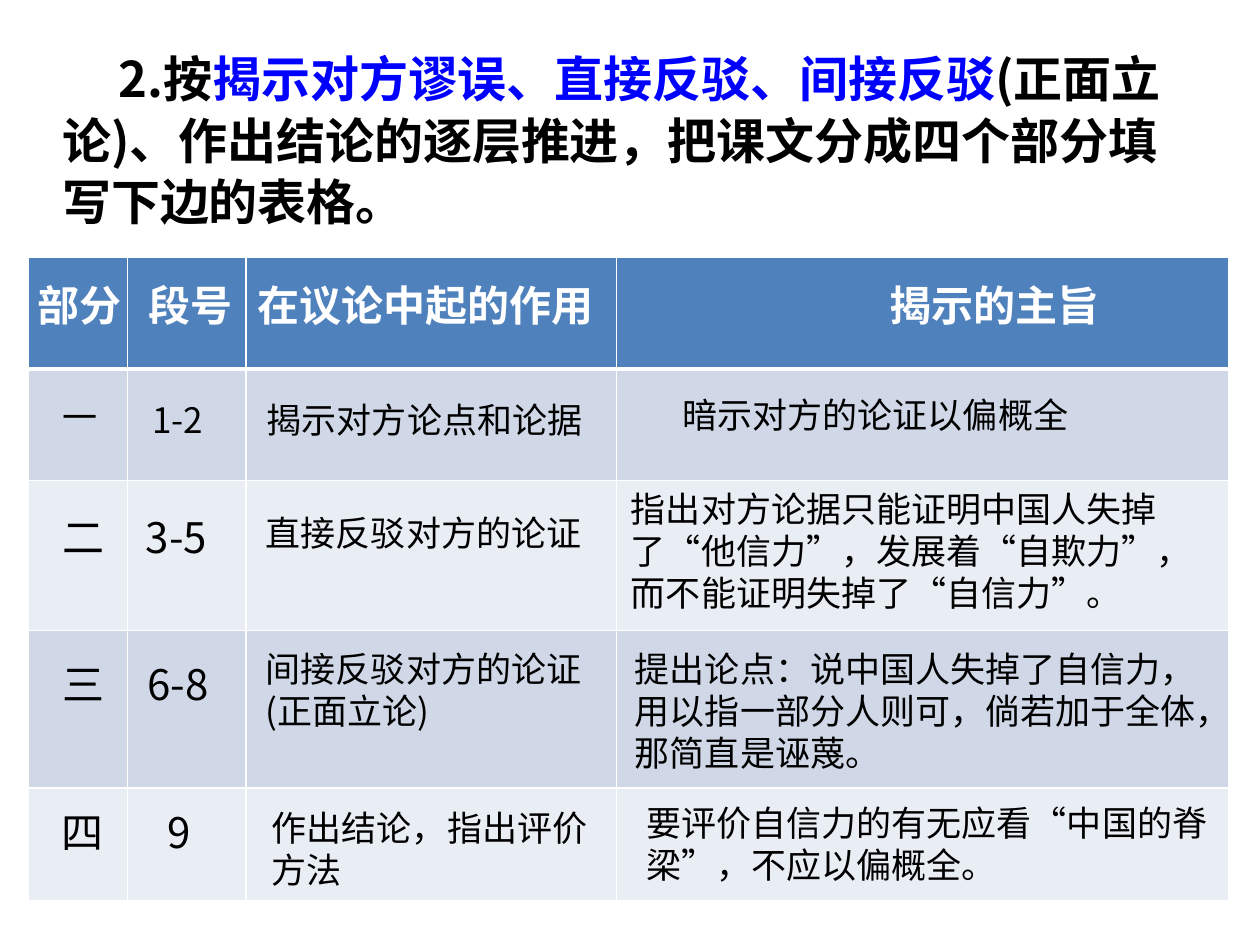
from dataclasses import dataclass
from typing import Any

from lxml import etree
from pptx import Presentation, util as u
from pptx.dml.color import RGBColor
from pptx.enum import text
from pptx.oxml import ns

COLORS = {"black": "000000", "white": "FFFFFF", "accent": "0000FF",
          "header": "4F81BD", "odd": "D0D8E8", "even": "E9EDF4"}
MIDDLE_INSET = 0.25


@dataclass
class Lesson:
    slide: Any
    font: str = "Noto Sans CJK SC"

    def style(self, run, size, color="black", bold=False):
        for name, value in {"size": u.Pt(size), "bold": bold, "name": self.font}.items():
            setattr(run.font, name, value)
        run.font.color.rgb = RGBColor.from_string(COLORS[color])
        east_asian = etree.SubElement(run.font._element, ns.qn("a:ea"))
        east_asian.set("typeface", self.font)

    def place(self, shape, left, top, width, height):
        for name, value in zip(("left", "top", "width", "height"), (left, top, width, height)):
            setattr(shape, name, u.Cm(value))

    def title(self, box, parts, size, indent):
        heading = self.slide.shapes.title
        self.place(heading, *box)
        heading.fill.solid()
        heading.fill.fore_color.rgb = RGBColor.from_string(COLORS["white"])
        white = heading._element.spPr.find(f".//{ns.qn('a:srgbClr')}")
        etree.SubElement(white, ns.qn("a:alpha")).set("val", "18000")
        frame = heading.text_frame
        for name, value in {"word_wrap": True, "auto_size": text.MSO_AUTO_SIZE.NONE,
                            "vertical_anchor": text.MSO_ANCHOR.TOP}.items():
            setattr(frame, name, value)
        paragraph = frame.paragraphs[0]
        for name, value in {"alignment": text.PP_ALIGN.LEFT, "line_spacing": u.Pt(35)}.items():
            setattr(paragraph, name, value)
        paragraph._p.get_or_add_pPr().set("indent", str(u.Cm(indent)))
        for words, color in parts:
            run = paragraph.add_run()
            run.text = words
            self.style(run, size, color, bold=True)

    def border(self, cell, side, points):
        line = etree.SubElement(cell._tc.get_or_add_tcPr(), ns.qn(f"a:ln{side}"))
        line.set("w", str(u.Pt(points)))
        fill = etree.SubElement(line, ns.qn("a:solidFill"))
        etree.SubElement(fill, ns.qn("a:srgbClr")).set("val", COLORS["white"])

    def grid(self, left, top, widths, heights):
        table = self.slide.shapes.add_table(
            len(heights), len(widths), u.Cm(left), u.Cm(top),
            u.Cm(sum(widths)), u.Cm(sum(heights))).table
        for column, width in zip(table.columns, widths):
            column.width = u.Cm(width)
        for index, (row, height) in enumerate(zip(table.rows, heights)):
            row.height = u.Cm(height)
            band = "header" if index == 0 else ("even", "odd")[index % 2]
            weights = {"L": 1, "R": 1, "T": 3 if index == 1 else 1, "B": 3 if index == 0 else 1}
            for cell in row.cells:
                for side, points in weights.items():
                    self.border(cell, side, points)
                cell.fill.solid()
                cell.fill.fore_color.rgb = RGBColor.from_string(COLORS[band])

    def label(self, words, left, top, width, size=20, lines=1, color="black", bold=False):
        height = lines * u.Pt(size * 1.2).cm + MIDDLE_INSET
        box = self.slide.shapes.add_textbox(*map(u.Cm, (left, top, width, height)))
        frame = box.text_frame
        frame.word_wrap = True
        frame.auto_size = text.MSO_AUTO_SIZE.SHAPE_TO_FIT_TEXT
        for index, line in enumerate(words.split("\n")):
            paragraph = frame.add_paragraph() if index else frame.paragraphs[0]
            run = paragraph.add_run()
            run.text = line
            self.style(run, size, color, bold)


def main():
    deck = Presentation()
    deck.slide_width, deck.slide_height = u.Cm(25.4), u.Cm(19.05)
    lesson = Lesson(deck.slides.add_slide(deck.slide_layouts[5]))

    lesson.title((1, 0.81, 23.11, 3.81), [
        ("2.按", "black"),
        ("揭示对方谬误、直接反驳、间接反驳", "accent"),
        ("(正面立论)、作出结论的逐层推进，把课文分成四个部分填写下边的表格。", "black"),
    ], size=28, indent=1.14)

    lesson.grid(0.56, 5.19, widths=(2.01, 2.39, 7.47, 12.35),
                heights=(2.25, 2.25, 3.02, 3.18, 2.26))

    headings = [("部分", 0.51, 2.24), ("段号", 2.74, 2.24),
                ("在议论中起的作用", 4.95, 7.6), ("揭示的主旨", 17.68, 5)]
    for words, left, width in headings:
        lesson.label(words, left, 5.51, width, size=24, color="white", bold=True)

    numbers = [("一", 1.02, 7.85, "1-2", 2.82, 7.9, 20),
               ("二", 1.02, 10.19, "3-5", 2.69, 10.19, 24),
               ("三", 1.02, 13.16, "6-8", 2.72, 13.16, 24),
               ("四", 0.99, 16.13, "9", 3.12, 16.13, 24)]
    for part, part_left, part_top, span, span_left, span_top, size in numbers:
        lesson.label(part, part_left, part_top, 1.79, size)
        lesson.label(span, span_left, span_top, 2.13 if "-" in span else 1.3, size)

    answers = [
        ("揭示对方论点和论据", 5.13, 7.9, 7.65, 1),
        ("暗示对方的论证以偏概全", 13.51, 7.8, 8.48, 1),
        ("直接反驳对方的论证", 5.11, 10.19, 8.81, 1),
        ("指出对方论据只能证明中国人失掉了“他信力”，发展着“自欺力”，而不能证明失掉了“自信力”。",
         12.47, 9.7, 12.01, 3),
        ("间接反驳对方的论证\n(正面立论)", 5.11, 12.93, 7.04, 2),
        ("提出论点：说中国人失掉了自信力，用以指一部分人则可，倘若加于全体，那简直是诬蔑。",
         12.55, 12.93, 12.01, 3),
        ("作出结论，指出评价方法", 5.23, 16.13, 7.01, 2),
        ("要评价自信力的有无应看“中国的脊梁”，不应以偏概全。", 12.78, 16.03, 12.01, 2),
    ]
    for words, left, top, width, lines in answers:
        lesson.label(words, left, top, width, lines=lines)

    deck.save("out.pptx")


if __name__ == "__main__":
    main()
